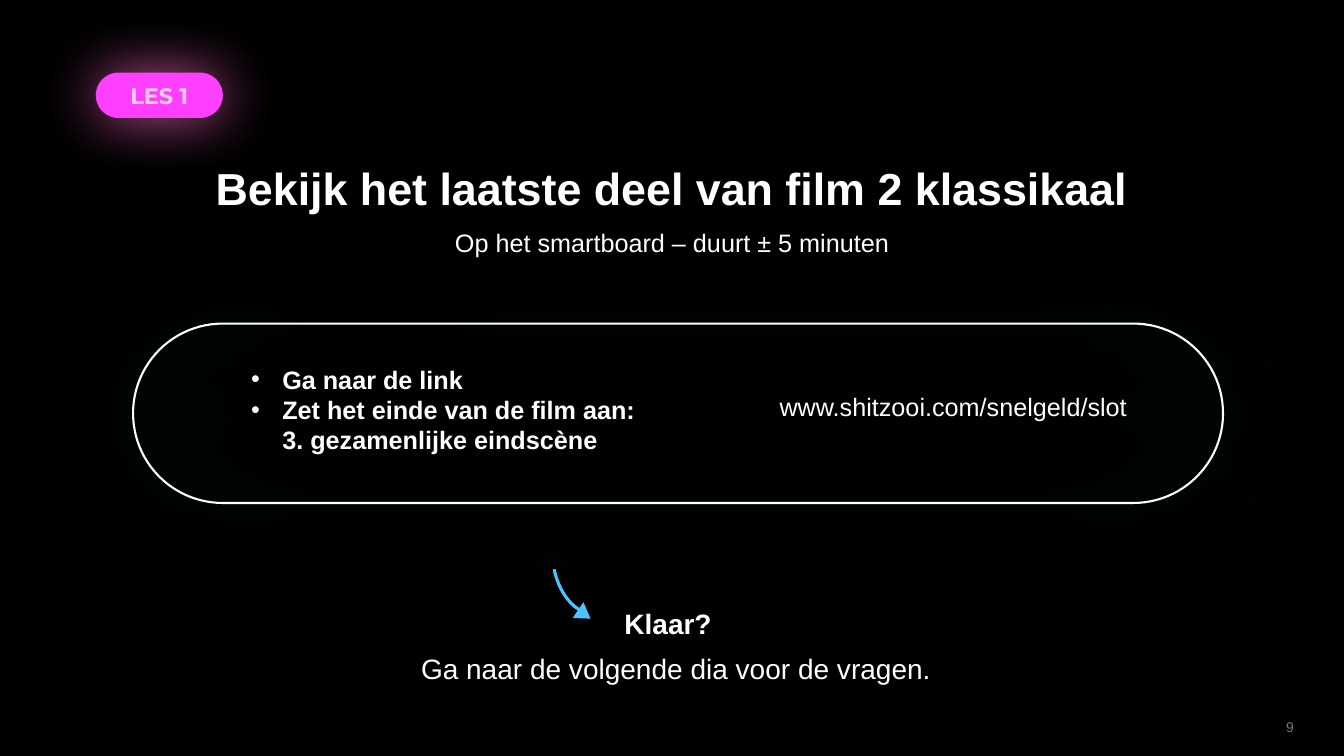
from lxml import etree
from pptx import Presentation
from pptx import util as u
from pptx.dml.color import RGBColor
from pptx.enum import shapes, text
from pptx.oxml import ns

BLACK = RGBColor(0x00, 0x00, 0x00)
WHITE = RGBColor(0xFF, 0xFF, 0xFF)
GREY = RGBColor(0x79, 0x79, 0x79)
PINK = RGBColor(0xFF, 0x3F, 0xFF)
PALE_PINK = RGBColor(0xF2, 0xCF, 0xEE)
PINK_GLOW = RGBColor(0xC8, 0x53, 0x9F)
BLUE = RGBColor(0x4F, 0xC3, 0xFF)
BLUE_GLOW = RGBColor(0x00, 0xCF, 0xFF)
LEFT, CENTER, RIGHT = (text.PP_ALIGN.LEFT, text.PP_ALIGN.CENTER,
                       text.PP_ALIGN.RIGHT)
TOP, MIDDLE = text.MSO_ANCHOR.TOP, text.MSO_ANCHOR.MIDDLE

prs = Presentation()
prs.slide_width, prs.slide_height = u.Inches(13.33), u.Inches(7.5)
s = prs.slides.add_slide(prs.slide_layouts[1])
s.background.fill.solid()
s.background.fill.fore_color.rgb = BLACK


def area(x, y, w, h):
    """Turn percentages of the slide into left, top, width, height."""
    W, H = prs.slide_width, prs.slide_height
    return [int(share * side / 100)
            for share, side in zip((x, y, w, h), (W, H, W, H))]


def write(sp, lines, align=CENTER, anchor=TOP, bullet=False, **font):
    tf = sp.text_frame
    tf.text = lines
    for name, value in dict(word_wrap=True, vertical_anchor=anchor,
                            auto_size=text.MSO_AUTO_SIZE.NONE).items():
        setattr(tf, name, value)
    for p in tf.paragraphs:
        p.alignment = align
        p.space_before = p.space_after = u.Pt(0)
        if bullet:
            pPr = p._p.get_or_add_pPr()
            pPr.set("marL", str(u.Inches(0.31)))
            pPr.set("indent", str(-u.Inches(0.31)))
            etree.SubElement(pPr, ns.qn("a:buFont"), typeface="Arial")
            etree.SubElement(pPr, ns.qn("a:buChar"), char="•")
        for r in p.runs:
            color = font.get("color", WHITE)
            for name, value in dict(name=font.get("name", "Arial"),
                                    size=u.Pt(font["size"]),
                                    bold=font.get("bold", False)).items():
                setattr(r.font, name, value)
            r.font.color.rgb = color


# Title and bullet list
title, steps = s.shapes.title, s.placeholders[1]
for sp, place in ((title, area(13.2, 20.53, 73.6, 8.53)),
                  (steps, area(17.93, 47.47, 32.11, 13.47))):
    sp.left, sp.top, sp.width, sp.height = place
write(title, "Bekijk het laatste deel van film 2 klassikaal", size=32, bold=True)
write(steps, "Ga naar de link\nZet het einde van de film aan:\v"
      "3. gezamenlijke eindscène", align=LEFT, bullet=True, size=18, bold=True)

# Glowing lesson badge and frame
pills = []
for place, glow, blur, alpha in (
        (area(7.13, 9.6, 9.45, 6), PINK_GLOW, 42.4, 100),
        (area(9.9, 42.8, 81.1, 23.73), BLUE_GLOW, 88.6, 80)):
    sp = s.shapes.add_shape(shapes.MSO_SHAPE.ROUNDED_RECTANGLE, *place)
    sp.adjustments[0] = 0.5
    sp.shadow.inherit = False
    effects = sp._element.spPr.find(ns.qn("a:effectLst"))
    shadow = etree.SubElement(effects, ns.qn("a:outerShdw"), algn="ctr",
                              blurRad=str(u.Pt(blur)), rotWithShape="0")
    clr = etree.SubElement(shadow, ns.qn("a:srgbClr"), val=str(glow))
    etree.SubElement(clr, ns.qn("a:alpha"), val=str(alpha * 1000))
    pills.append(sp)
badge, frame = pills
badge.fill.solid()
badge.fill.fore_color.rgb = PINK
badge.line.fill.background()
write(badge, "LES 1", anchor=MIDDLE, size=16, bold=True,
      name="Montserrat", color=PALE_PINK)
frame.fill.background()
frame.line.color.rgb = WHITE
frame.line.width = u.Pt(1.5)

# Plain text lines
for place, line, look in (
        ((29.26, 29.47, 41.49, 5.33), "Op het smartboard – duurt ± 5 minuten",
         dict(size=18)),
        ((46.51, 51.07, 48.84, 7.07), "www.shitzooi.com/snelgeld/slot",
         dict(size=18)),
        ((20.11, 79.6, 59.19, 5.87), "Klaar?", dict(size=20, bold=True)),
        ((25.96, 85.47, 48.69, 5.87), "Ga naar de volgende dia voor de vragen.",
         dict(size=20)),
        ((74.49, 93.47, 22.51, 5.33), "9",
         dict(size=10, color=GREY, align=RIGHT, anchor=MIDDLE))):
    write(s.shapes.add_textbox(*area(*place)), line, **look)

# Curved arrow: arc and triangular head
arc = s.shapes.add_shape(shapes.MSO_SHAPE.ARC, *area(41.19, 67.87, 4.58, 13.33))
arc.adjustments[0], arc.adjustments[1] = 215.08, 43.59
arc._element.spPr.xfrm.set("flipH", "1")
arc.rotation = 347.5
arc.fill.background()
arc.line.color.rgb = BLUE
arc.line.width = u.Pt(2.25)
head = s.shapes.add_shape(shapes.MSO_SHAPE.ISOSCELES_TRIANGLE,
                          *area(42.76, 80.27, 1.43, 2))
head.rotation = 124.2
head.fill.solid()
head.fill.fore_color.rgb = BLUE
head.line.fill.background()
for sp in (arc, head):
    sp.shadow.inherit = False

prs.save("out.pptx")
